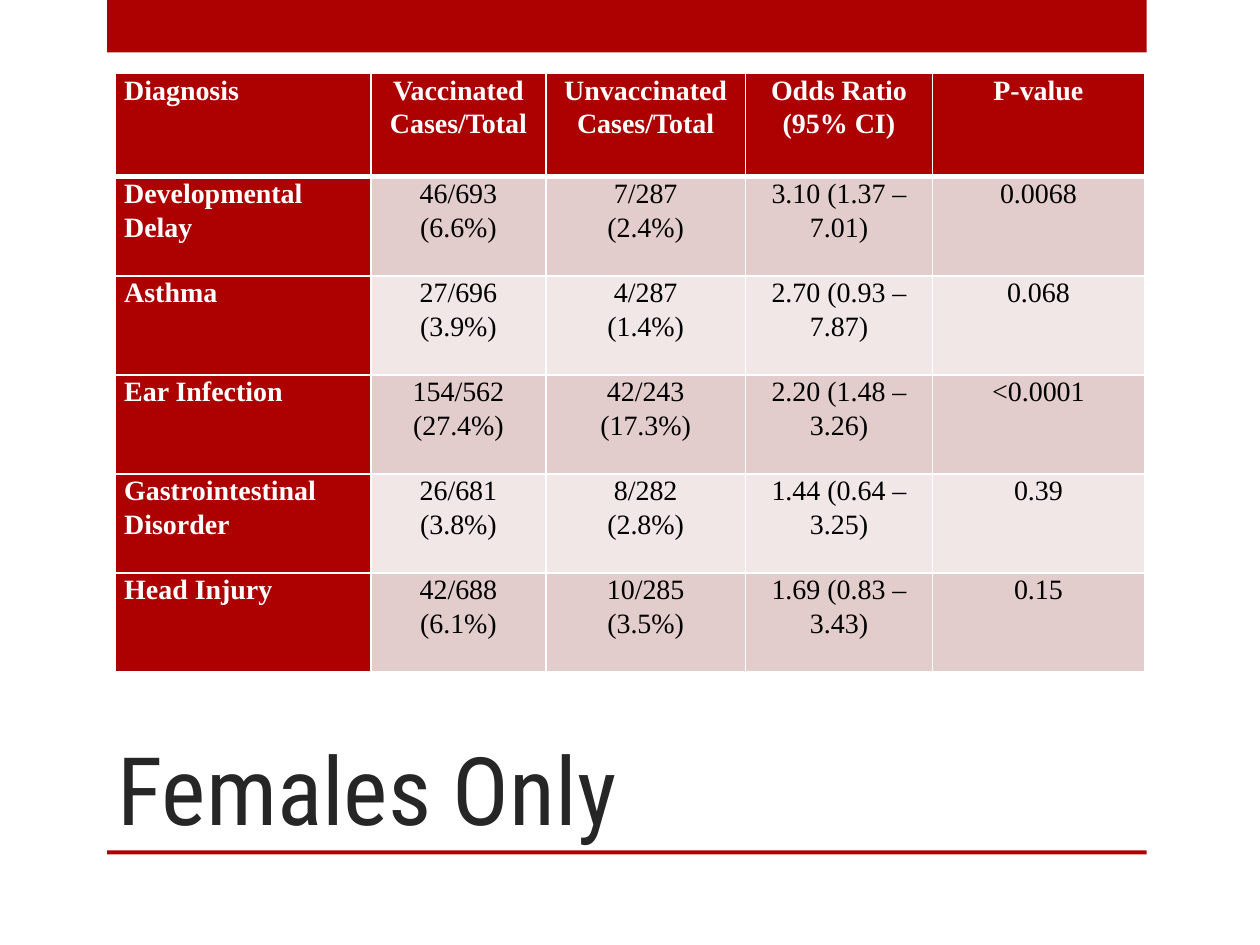
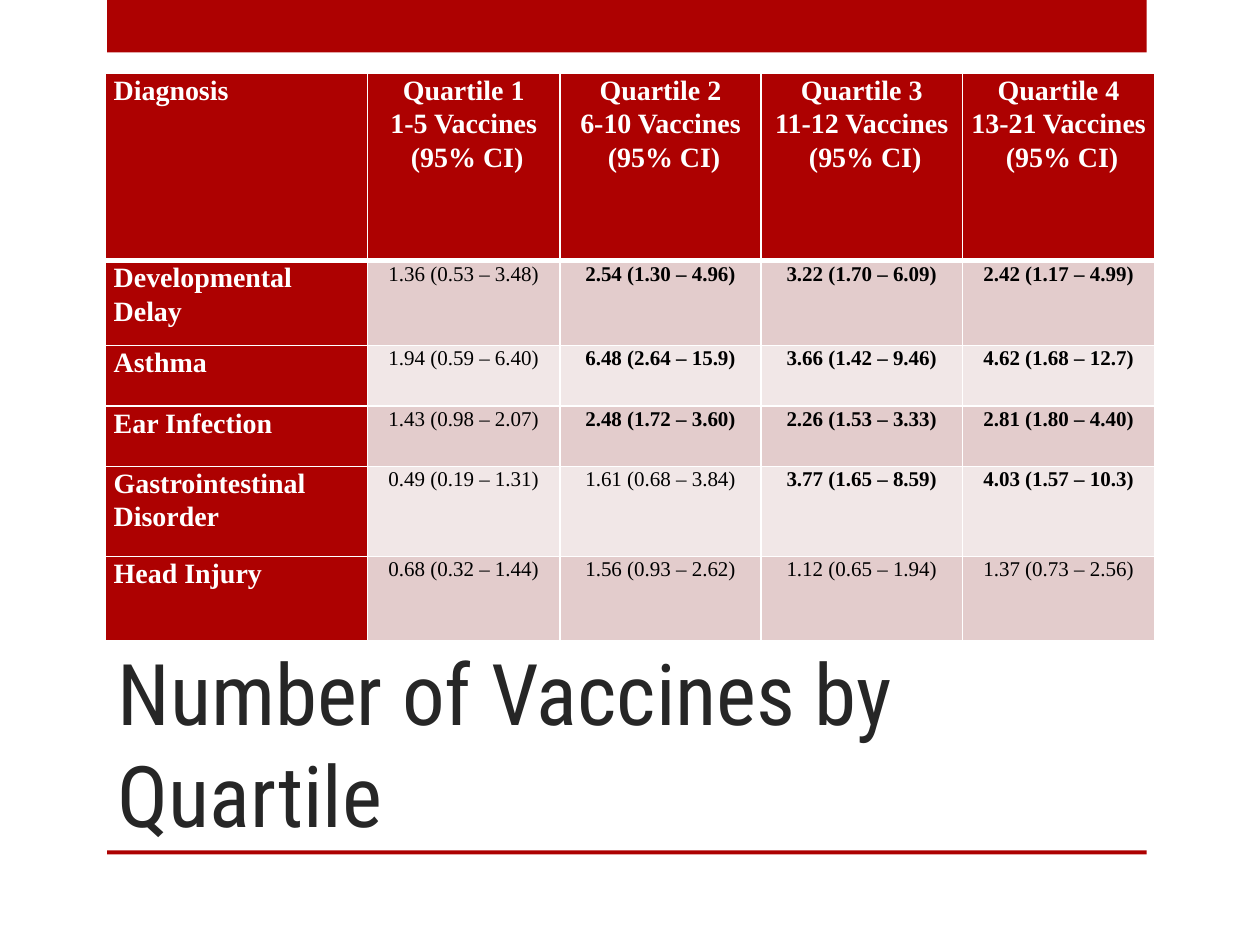
from dataclasses import dataclass

from lxml.etree import SubElement
from pptx import Presentation
from pptx.dml.color import RGBColor
from pptx.enum.shapes import MSO_SHAPE
from pptx.enum.text import MSO_ANCHOR, PP_ALIGN
from pptx.oxml.ns import qn
from pptx.util import Pt

# Content
DIAGNOSES = ["Developmental Delay", "Asthma", "Ear Infection",
             "Gastrointestinal Disorder", "Head Injury"]

FEMALES = {
    "title": "Females Only",
    "title_size": 54,
    "header": ["Diagnosis", "Vaccinated\nCases/Total", "Unvaccinated\nCases/Total",
               "Odds Ratio\n(95% CI)", "P-value"],
    "values": [
        ["46/693\n(6.6%)", "7/287\n(2.4%)", "3.10 (1.37 – 7.01)", "0.0068"],
        ["27/696\n(3.9%)", "4/287\n(1.4%)", "2.70 (0.93 – 7.87)", "0.068"],
        ["154/562\n(27.4%)", "42/243\n(17.3%)", "2.20 (1.48 – 3.26)", "<0.0001"],
        ["26/681\n(3.8%)", "8/282\n(2.8%)", "1.44 (0.64 – 3.25)", "0.39"],
        ["42/688\n(6.1%)", "10/285\n(3.5%)", "1.69 (0.83 – 3.43)", "0.15"],
    ],
    "value_size": 16,
    "bold_significant": False,
    "left": 66,
    "columns": [146, 100, 114, 107, 121],
    "rows": [59] + [56.6] * 5,
}

QUARTILES = {
    "title": "Number of Vaccines by Quartile",
    "title_size": 48.6,
    "header": ["Diagnosis"] + [
        f"Quartile {number}\n{doses} Vaccines\n (95% CI)"
        for number, doses in enumerate(["1-5", "6-10", "11-12", "13-21"], 1)],
    "values": [
        ["1.36 (0.53 – 3.48)", "2.54 (1.30 – 4.96)", "3.22 (1.70 – 6.09)", "2.42 (1.17 – 4.99)"],
        ["1.94 (0.59 – 6.40)", "6.48 (2.64 – 15.9)", "3.66 (1.42 – 9.46)", "4.62 (1.68 – 12.7)"],
        ["1.43 (0.98 – 2.07)", "2.48 (1.72 – 3.60)", "2.26 (1.53 – 3.33)", "2.81 (1.80 – 4.40)"],
        ["0.49 (0.19 – 1.31)", "1.61 (0.68 – 3.84)", "3.77 (1.65 – 8.59)", "4.03 (1.57 – 10.3)"],
        ["0.68 (0.32 – 1.44)", "1.56 (0.93 – 2.62)", "1.12 (0.65 – 1.94)", "1.37 (0.73 – 2.56)"],
    ],
    "value_size": 12,
    "bold_significant": True,
    "left": 60,
    "columns": [150, 110, 115, 115, 110],
    "rows": [107, 48.4, 34.6, 34.6, 51.4, 48],
}


@dataclass(frozen=True)
class Theme:
    red: str = "AD0101"
    white: str = "FFFFFF"
    black: str = "000000"
    title_color: str = "262626"
    stripes: tuple = ("E3CCCC", "F1E7E7")
    title_font: str = "Roboto Condensed"
    table_font: str = "Times New Roman"
    label_size: float = 16
    line_spacing: float = 1.07
    thin_border: float = 1
    thick_border: float = 3


THEME = Theme()
TABLE_TOP = 42
CELL_MARGIN = 5
BAND_LEFT, BAND_WIDTH = 61.2, 594
BANDS = [(0, 30), (486, 2.2)]  # top, height
TITLE_BOX = (60, 360, 534, 126)


def format_runs(paragraph, font_name, size, color, bold=False):
    for run in paragraph.runs:
        run.font.name = font_name
        run.font.size = Pt(size)
        run.font.bold = bold
        run.font.color.rgb = RGBColor.from_string(color)


def add_bands(slide):
    for top, height in BANDS:
        shape = slide.shapes.add_shape(
            MSO_SHAPE.RECTANGLE, Pt(BAND_LEFT), Pt(top), Pt(BAND_WIDTH), Pt(height))
        shape.shadow.inherit = False
        shape.fill.solid()
        shape.fill.fore_color.rgb = RGBColor.from_string(THEME.red)
        shape.line.fill.background()


def add_title(slide, title, size):
    text_frame = slide.shapes.add_textbox(*map(Pt, TITLE_BOX)).text_frame
    text_frame.word_wrap = True
    text_frame.vertical_anchor = MSO_ANCHOR.BOTTOM
    text_frame.text = title
    format_runs(text_frame.paragraphs[0], THEME.title_font, size, THEME.title_color)


def set_borders(cell, row):
    # The rule between header and body is thick on both of its sides
    top = THEME.thick_border if row == 1 else THEME.thin_border
    bottom = THEME.thick_border if row == 0 else THEME.thin_border
    widths = {"a:lnL": THEME.thin_border, "a:lnR": THEME.thin_border,
              "a:lnT": top, "a:lnB": bottom}
    properties = cell._tc.get_or_add_tcPr()
    for tag, width in widths.items():
        line = SubElement(properties, qn(tag), w=str(Pt(width)))
        fill = SubElement(line, qn("a:solidFill"))
        SubElement(fill, qn("a:srgbClr"), val=THEME.white)


def is_significant(estimate):
    """True when the lower confidence limit lies above 1."""
    return float(estimate.split("(")[1].split(" –")[0]) > 1


def fill_cell(cell, text, row, column, content):
    is_label = row == 0 or column == 0
    if is_label:
        fill, color, size, bold = THEME.red, THEME.white, THEME.label_size, True
    else:
        fill, color, size = THEME.stripes[(row - 1) % 2], THEME.black, content["value_size"]
        bold = content["bold_significant"] and is_significant(text)

    set_borders(cell, row)
    cell.fill.solid()
    cell.fill.fore_color.rgb = RGBColor.from_string(fill)
    cell.margin_left = cell.margin_right = Pt(CELL_MARGIN)
    cell.margin_top = cell.margin_bottom = 0
    cell.text_frame.text = text
    for paragraph in cell.text_frame.paragraphs:
        paragraph.alignment = PP_ALIGN.LEFT if column == 0 else PP_ALIGN.CENTER
        paragraph.line_spacing = THEME.line_spacing
        format_runs(paragraph, THEME.table_font, size, color, bold)


def add_results_table(slide, content):
    columns, rows = content["columns"], content["rows"]
    table = slide.shapes.add_table(
        len(rows), len(columns), Pt(content["left"]), Pt(TABLE_TOP),
        Pt(sum(columns)), Pt(sum(rows))).table
    for column, width in zip(table.columns, columns):
        column.width = Pt(width)
    for row, height in zip(table.rows, rows):
        row.height = Pt(height)

    body = [[name] + values for name, values in zip(DIAGNOSES, content["values"])]
    for row, texts in enumerate([content["header"]] + body):
        for column, text in enumerate(texts):
            fill_cell(table.cell(row, column), text, row, column, content)


def main():
    presentation = Presentation()
    presentation.slide_width, presentation.slide_height = Pt(720), Pt(540)
    for content in (FEMALES, QUARTILES):
        slide = presentation.slides.add_slide(presentation.slide_layouts[6])
        add_bands(slide)
        add_title(slide, content["title"], content["title_size"])
        add_results_table(slide, content)
    presentation.save("out.pptx")


if __name__ == "__main__":
    main()
